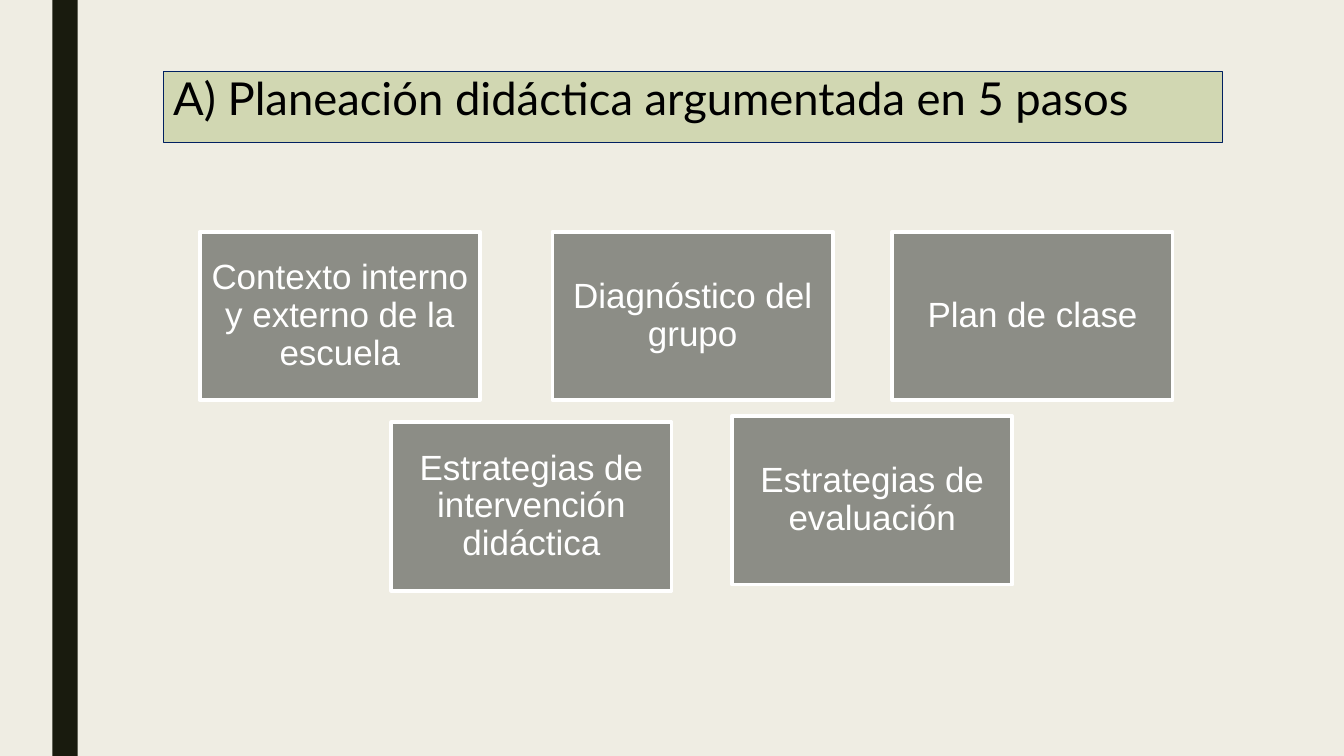
from dataclasses import dataclass

from pptx import Presentation
from pptx.dml.color import RGBColor
from pptx.enum.shapes import MSO_SHAPE
from pptx.enum.text import MSO_ANCHOR, PP_ALIGN
from pptx.shapes.autoshape import Shape
from pptx.slide import Slide
from pptx.util import Emu, Pt

RECTANGLE = MSO_SHAPE.RECTANGLE
TOP, MIDDLE = MSO_ANCHOR.TOP, MSO_ANCHOR.MIDDLE
LEFT, CENTER = PP_ALIGN.LEFT, PP_ALIGN.CENTER

EMU_PER_PX = 9144  # 100 px to the inch
SLIDE_WIDTH, SLIDE_HEIGHT = 1333, 750
STEP_WIDTH, STEP_HEIGHT = 278, 167

COLORS = {
    "background": "EFEDE3",
    "side_bar": "191B0E",
    "title_fill": "D1D7B2",
    "title_line": "002060",
    "title_text": "000000",
    "step_fill": "8C8D86",
    "white": "FFFFFF",
}


@dataclass(frozen=True)
class TextStyle:
    font: str
    size: float
    color: str
    align: PP_ALIGN
    anchor: MSO_ANCHOR
    line_spacing: float
    inset_y: int


@dataclass(frozen=True)
class Step:
    text: str
    left: int
    top: int


TITLE_STYLE = TextStyle("Lato", 32.4, "title_text", LEFT, TOP, 0.89, 5)
STEP_STYLE = TextStyle("Arial", 25, "white", CENTER, MIDDLE, 0.9, 10)

STEPS = [
    Step("Contexto interno y externo de la escuela", 198, 230),
    Step("Diagnóstico del grupo", 548, 230),
    Step("Plan de clase", 885, 230),
    Step("Estrategias de intervención didáctica", 388, 419),
    Step("Estrategias de evaluación", 726, 413),
]


def px(length: int) -> Emu:
    return Emu(length * EMU_PER_PX)


def rgb(name: str) -> RGBColor:
    return RGBColor.from_string(COLORS[name])


def add_box(slide: Slide, left: int, top: int, width: int, height: int,
            fill: str, line: str = "", line_width: float = 0) -> Shape:
    """Draw a flat rectangle; without a line colour it has no outline."""
    box = slide.shapes.add_shape(RECTANGLE, px(left), px(top), px(width), px(height))
    box.shadow.inherit = False
    box.fill.solid()
    box.fill.fore_color.rgb = rgb(fill)
    if line:
        box.line.color.rgb = rgb(line)
        box.line.width = Pt(line_width)
    else:
        box.line.fill.background()
    return box


def write_text(box: Shape, text: str, style: TextStyle) -> None:
    frame = box.text_frame
    frame_format = {
        "word_wrap": True,
        "vertical_anchor": style.anchor,
        "margin_left": px(10),
        "margin_right": px(10),
        "margin_top": px(style.inset_y),
        "margin_bottom": px(style.inset_y),
    }
    for attribute, value in frame_format.items():
        setattr(frame, attribute, value)

    paragraph = frame.paragraphs[0]
    paragraph.alignment = style.align
    paragraph.line_spacing = style.line_spacing
    run = paragraph.add_run()
    run.text = text
    run.font.name = style.font
    run.font.size = Pt(style.size)
    run.font.color.rgb = rgb(style.color)


def main() -> None:
    presentation = Presentation()
    presentation.slide_width = px(SLIDE_WIDTH)
    presentation.slide_height = px(SLIDE_HEIGHT)
    slide = presentation.slides.add_slide(presentation.slide_layouts[6])
    slide.background.fill.solid()
    slide.background.fill.fore_color.rgb = rgb("background")

    add_box(slide, 52, 0, 25, SLIDE_HEIGHT, "side_bar")

    title = add_box(slide, 162, 71, 1050, 70, "title_fill", "title_line", 0.5)
    write_text(title, "A) Planeación didáctica argumentada en 5 pasos", TITLE_STYLE)

    for step in STEPS:
        step_box = add_box(slide, step.left, step.top, STEP_WIDTH, STEP_HEIGHT,
                           "step_fill", "white", 2.75)
        write_text(step_box, step.text, STEP_STYLE)

    presentation.save("out.pptx")


if __name__ == "__main__":
    main()
